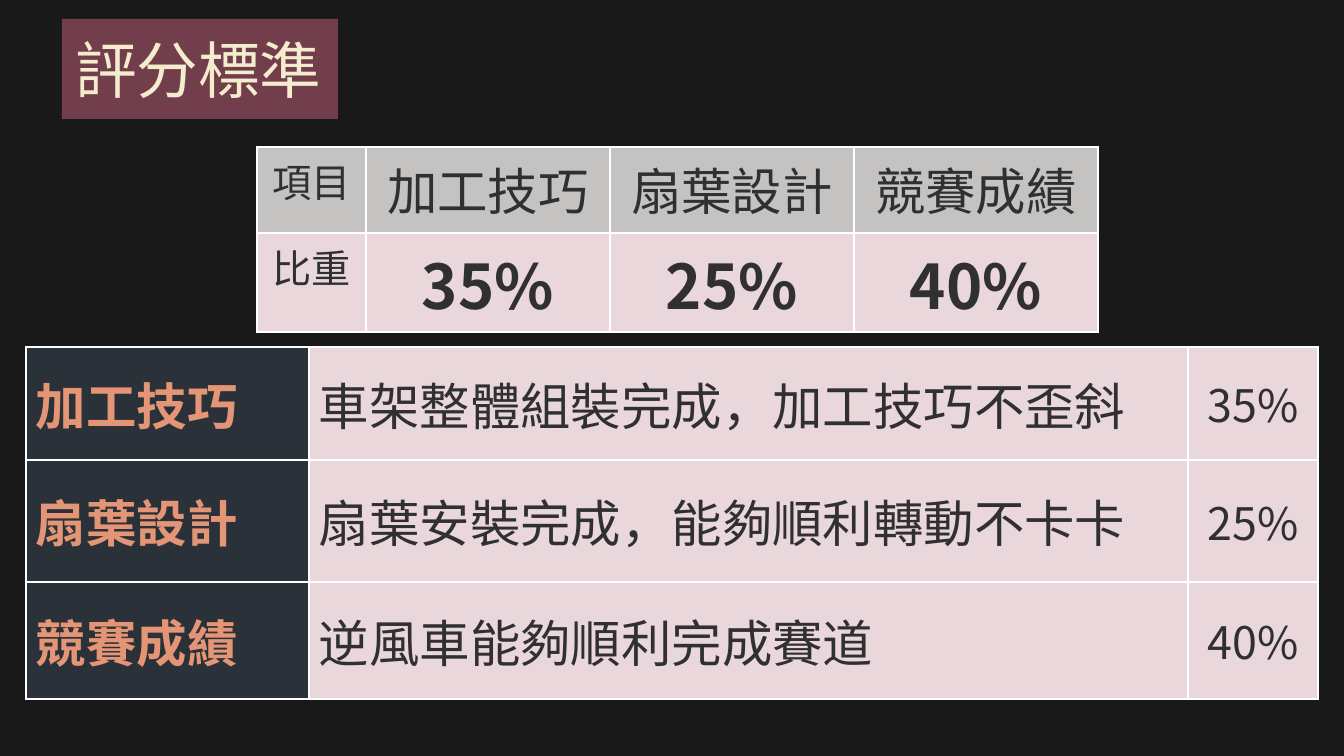
"""Build the scoring criteria slide with its weight and criteria tables."""
from pptx import Presentation
from pptx.dml.color import RGBColor as RGB
from pptx.enum.shapes import MSO_SHAPE as Shape
from pptx.enum.text import MSO_ANCHOR as Anchor, PP_ALIGN as Align
from pptx.oxml.ns import qn
from pptx.util import Pt
from lxml.etree import SubElement

SLIDE_WIDTH, SLIDE_HEIGHT = 1344, 756
EMU_PER_PX = 9144000 / SLIDE_WIDTH
FONT = "Noto Sans CJK JP"

BACKGROUND = RGB(0x19, 0x19, 0x19)
WINE = RGB(0x73, 0x3E, 0x4B)
CREAM = RGB(0xF3, 0xEC, 0xCD)
NAVY = RGB(0x2A, 0x31, 0x39)
ORANGE = RGB(0xE4, 0x95, 0x76)
PINK = RGB(0xE9, 0xD7, 0xDB)
GRAY = RGB(0xC4, 0xC3, 0xC1)
INK = RGB(0x30, 0x30, 0x30)
WHITE = RGB(0xFF, 0xFF, 0xFF)


def px(length):
    return round(length * EMU_PER_PX)


class SlideBuilder:
    def __init__(self, presentation):
        self.slide = presentation.slides.add_slide(presentation.slide_layouts[6])
        fill = self.slide.background.fill
        fill.solid()
        fill.fore_color.rgb = BACKGROUND

    def add_text(self, paragraph, text, size, color, bold=False, align=Align.LEFT):
        paragraph.alignment = align
        run = paragraph.add_run()
        run.text = text
        font = run.font
        font.name, font.size, font.bold = FONT, Pt(size), bold
        font.color.rgb = color
        SubElement(run._r.get_or_add_rPr(), qn("a:ea")).set("typeface", FONT)

    def title(self, text, left, top, width, height):
        shape = self.slide.shapes.add_shape(
            Shape.RECTANGLE, px(left), px(top), px(width), px(height))
        shape.shadow.inherit = False
        shape.fill.solid()
        shape.fill.fore_color.rgb = WINE
        shape.line.fill.background()
        frame = shape.text_frame
        frame.word_wrap = True
        frame.vertical_anchor = Anchor.MIDDLE
        self.add_text(frame.paragraphs[0], text, 33, CREAM)

    def border(self, cell):
        properties = cell._tc.get_or_add_tcPr()
        for side in ("lnL", "lnR", "lnT", "lnB"):
            line = SubElement(properties, qn(f"a:{side}"), w=str(Pt(1)))
            fill = SubElement(line, qn("a:solidFill"))
            SubElement(fill, qn("a:srgbClr"), val=str(WHITE))

    def cell(self, cell, text, fill, anchor, **style):
        cell.margin_left = cell.margin_right = px(10)
        cell.margin_top = cell.margin_bottom = px(5)
        cell.vertical_anchor = anchor
        self.border(cell)
        cell.fill.solid()
        cell.fill.fore_color.rgb = fill
        self.add_text(cell.text_frame.paragraphs[0], text, **style)

    def table(self, left, top, widths, heights, rows, anchor, style_for):
        table = self.slide.shapes.add_table(
            len(heights), len(widths), px(left), px(top),
            px(sum(widths)), px(sum(heights))).table
        table.first_row = table.horz_banding = False
        for column, width in zip(table.columns, widths):
            column.width = px(width)
        for row, height in zip(table.rows, heights):
            row.height = px(height)
        for i, texts in enumerate(rows):
            for j, text in enumerate(texts):
                self.cell(table.cell(i, j), text, anchor=anchor, **style_for(i, j))


def criteria_style(row, column):
    return (
        dict(fill=NAVY, size=27, color=ORANGE, bold=True, align=Align.JUSTIFY),
        dict(fill=PINK, size=27, color=INK),
        dict(fill=PINK, size=24, color=INK, align=Align.CENTER),
    )[column]


def weight_style(row, column):
    size = 21 if column == 0 else (27, 33)[row]
    return dict(fill=(GRAY, PINK)[row], size=size, color=INK,
                bold=row == 1 and column > 0, align=Align.CENTER)


def main():
    presentation = Presentation()
    presentation.slide_width = px(SLIDE_WIDTH)
    presentation.slide_height = px(SLIDE_HEIGHT)
    builder = SlideBuilder(presentation)

    names = ["加工技巧", "扇葉設計", "競賽成績"]
    weights = ["35%", "25%", "40%"]
    details = ["車架整體組裝完成，加工技巧不歪斜",
               "扇葉安裝完成，能夠順利轉動不卡卡",
               "逆風車能夠順利完成賽道"]

    builder.title("評分標準", 62, 19, 276, 100)
    builder.table(26, 347, [283, 879, 130], [113, 122, 117],
                  list(zip(names, details, weights)), Anchor.MIDDLE, criteria_style)
    builder.table(257, 147, [109] + [244] * 3, [86, 86],
                  [["項目"] + names, ["比重"] + weights], Anchor.TOP, weight_style)
    presentation.save("out.pptx")


if __name__ == "__main__":
    main()
